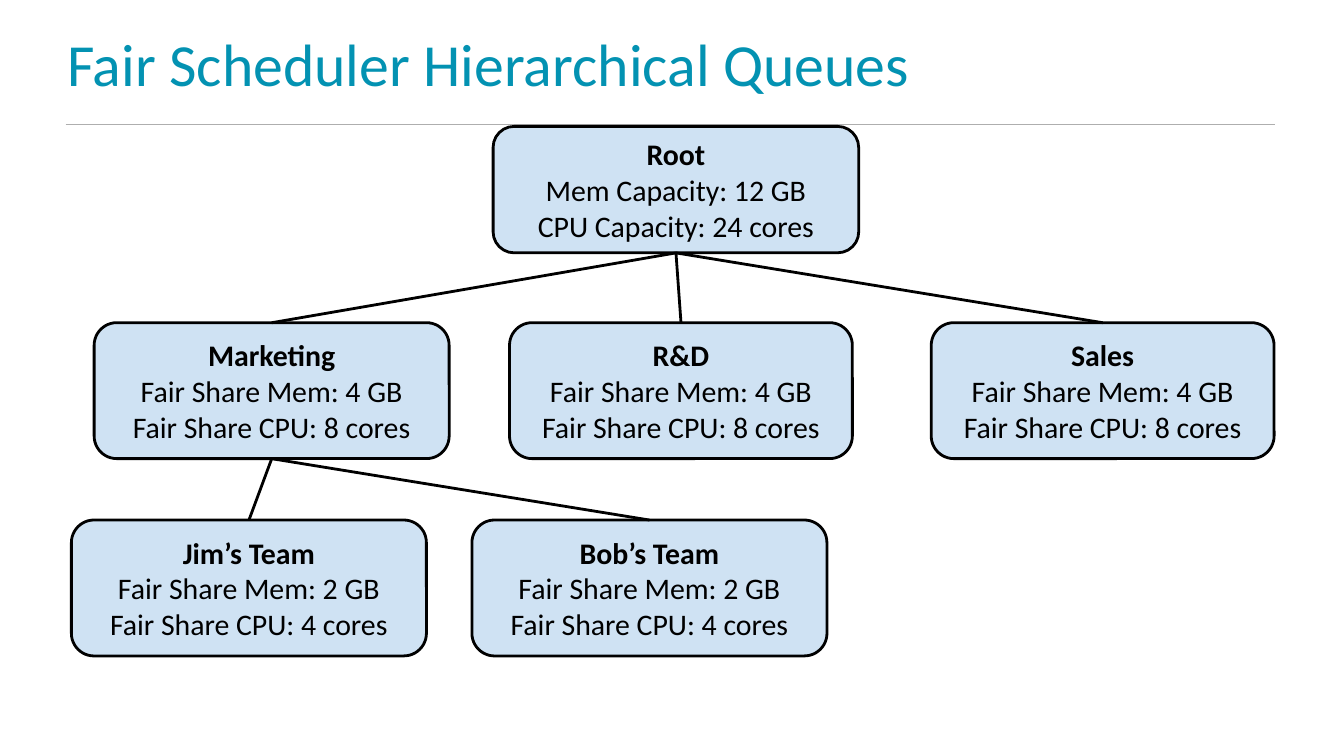
"""Build a slide showing the queue tree of a fair scheduler."""
import pptx
import pptx.dml.color
import pptx.enum.shapes
import pptx.enum.text
import pptx.oxml
import pptx.util

Cm, Pt = pptx.util.Cm, pptx.util.Pt
SHAPE = pptx.enum.shapes.MSO_SHAPE
LINK = pptx.enum.shapes.MSO_CONNECTOR.STRAIGHT
ALIGN, ANCHOR = pptx.enum.text.PP_ALIGN, pptx.enum.text.MSO_ANCHOR

HUES = {"title": "0392B2", "rule": "AEAEAE", "fill": "CFE2F3", "ink": "000000"}
TITLE = "Fair Scheduler Hierarchical Queues"
FAIR = "Fair Share Mem: {} GB", "Fair Share CPU: {} cores"
FULL = "Mem Capacity: {} GB", "CPU Capacity: {} cores"
ROWS = [(2.39, 2.39), (6.1, 2.57), (9.83, 2.57)]
QUEUES = [
    ("Root", None, FULL, (12, 24), 0, 9.32, 6.91),
    ("Marketing", "Root", FAIR, (4, 8), 1, 1.78, 6.71),
    ("R&D", "Root", FAIR, (4, 8), 1, 9.63, 6.48),
    ("Sales", "Root", FAIR, (4, 8), 1, 17.6, 6.48),
    ("Jim’s Team", "Marketing", FAIR, (2, 4), 2, 1.35, 6.71),
    ("Bob’s Team", "Marketing", FAIR, (2, 4), 2, 8.92, 6.71),
]
FRAME = {"word_wrap": True, "vertical_anchor": ANCHOR.MIDDLE}
INSET = {"margin_top": Cm(0.25), "margin_bottom": Cm(0.25)}
HEAD = {"name": "Calibri", "size": Pt(32)}
BODY = {"name": "Calibri", "size": Pt(16)}
TOP, BOTTOM = 0, 2


def tint(name):
    return pptx.dml.color.RGBColor.from_string(HUES[name])


def style(item, form):
    for key, value in form.items():
        setattr(item, key, value)


def write(para, text, form, hue):
    para.text = text
    style(para.font, form)
    para.font.color.rgb = tint(hue)


def stroke(item, hue, width):
    item.line.color.rgb = tint(hue)
    item.line.width = Pt(width)


def link(slide, hue, width, ends=(0, 0, 0, 0)):
    line = slide.shapes.add_connector(LINK, *map(Cm, ends))
    stroke(line, hue, width)
    props = line.line._get_or_add_ln().getparent()
    props.append(pptx.oxml.parse_xml(
        '<a:effectLst xmlns:a="http://schemas.openxmlformats.org/drawingml/2006/main"/>'))
    return line


def add_queue(slide, name, lines, values, row, left, width):
    top, height = ROWS[row]
    box = slide.shapes.add_shape(
        SHAPE.ROUNDED_RECTANGLE, *map(Cm, (left, top, width, height)))
    box.shadow.inherit = False
    box.fill.solid()
    box.fill.fore_color.rgb = tint("fill")
    stroke(box, "ink", 1.5)
    frame = box.text_frame
    style(frame, FRAME | INSET)
    texts = [name] + [line.format(value) for line, value in zip(lines, values)]
    for spot, text in enumerate(texts):
        para = frame.add_paragraph() if spot else frame.paragraphs[0]
        write(para, text, BODY | {"bold": spot == 0}, "ink")
        para.alignment = ALIGN.CENTER
    return box


def main():
    deck = pptx.Presentation()
    style(deck, {"slide_width": Cm(25.4), "slide_height": Cm(14.29)})
    slide = deck.slides.add_slide(deck.slide_layouts[6])
    link(slide, "rule", 0.5, (1.24, 2.36, 24.1, 2.36))
    title = slide.shapes.add_textbox(*map(Cm, (1.02, 0.03, 22.86, 2.31)))
    style(title.text_frame, FRAME)
    write(title.text_frame.paragraphs[0], TITLE, HEAD, "title")

    boxes = {}
    for name, _, *rest in QUEUES:
        boxes[name] = add_queue(slide, name, *rest)
    for name, parent, *_ in QUEUES:
        if parent:
            line = link(slide, "ink", 1.5)
            line.begin_connect(boxes[name], TOP)
            line.end_connect(boxes[parent], BOTTOM)
    deck.save("out.pptx")


if __name__ == "__main__":
    main()
